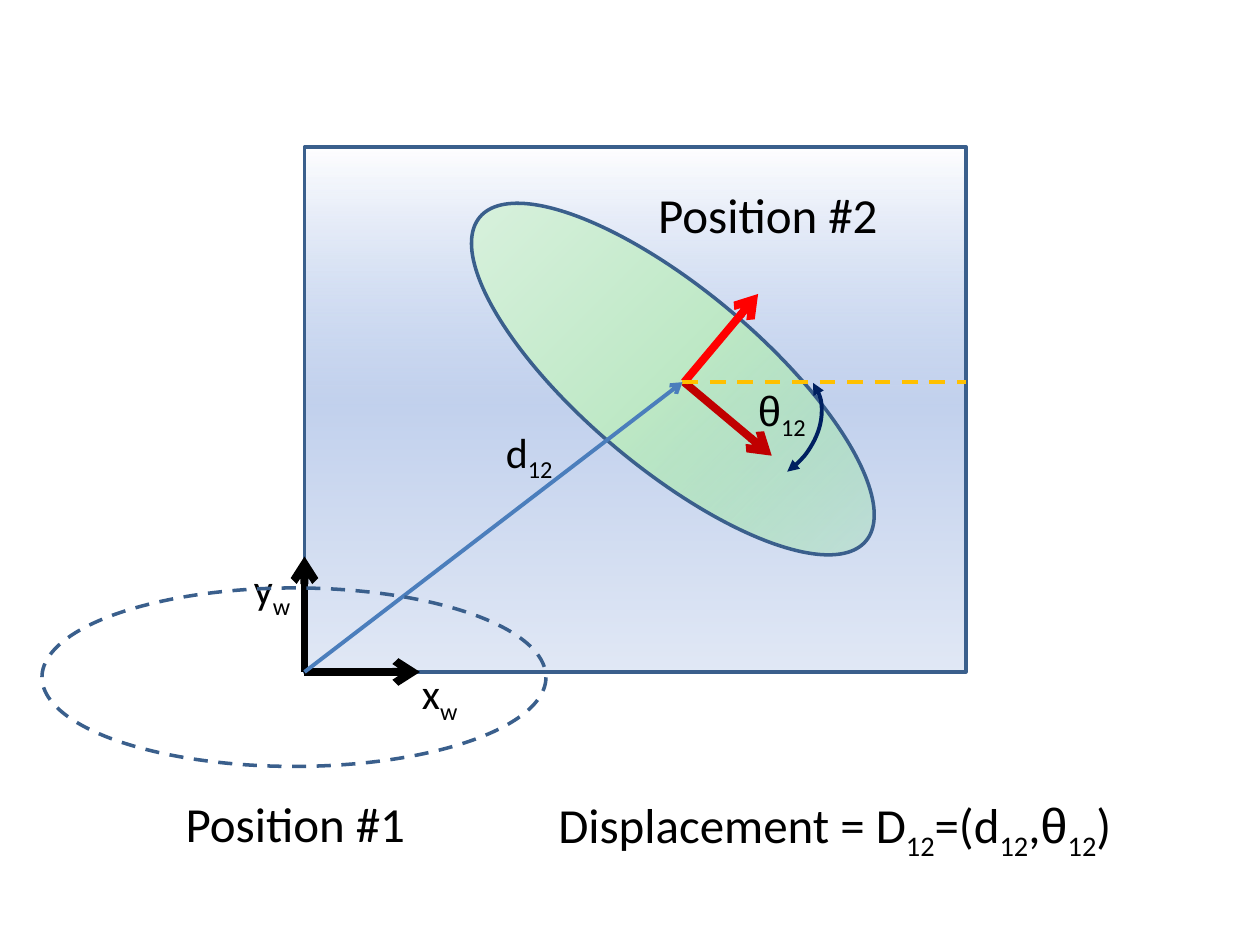
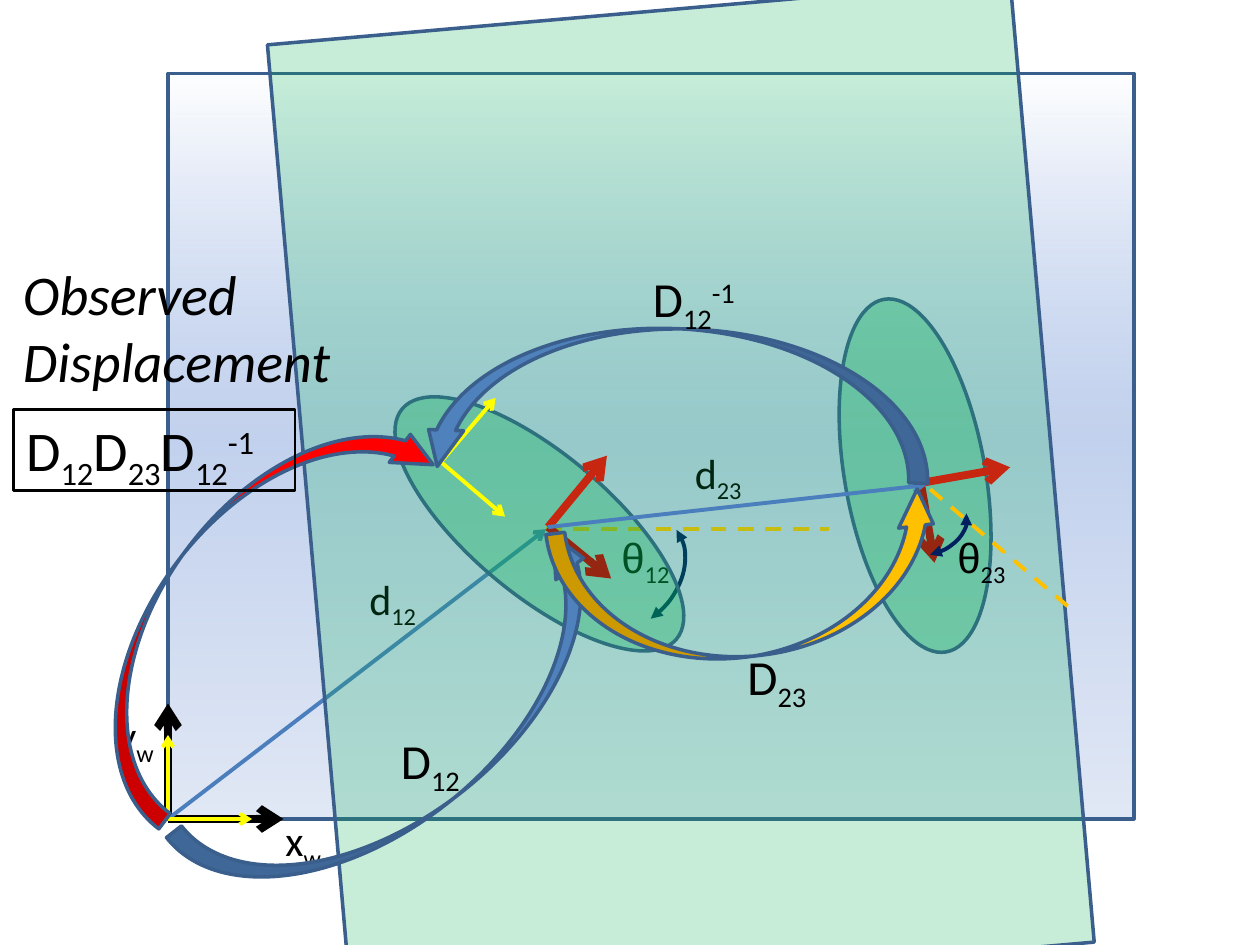
from dataclasses import dataclass

from pptx import Presentation
from pptx import util as u
from pptx.dml.color import RGBColor
from pptx.enum import dml, shapes, text
from pptx.oxml import ns, parse_xml
from pptx.oxml.xmlchemy import OxmlElement


@dataclass(frozen=True)
class Theme:
    font: str = "Calibri"
    greek: str = "Arial"
    black: str = "000000"
    outline: str = "3A5F8C"
    vector: str = "4B7EBC"
    curve: str = "4F81BD"
    red: str = "FF0000"
    dark_red: str = "C00000"
    gold: str = "FFC000"
    yellow: str = "FFFF00"
    navy: str = "002060"
    green: str = "00B050"
    sky: tuple = ((0, "9DB7E5", 0), (50, "C2D1ED", 100), (100, "E1E8F5", 100))
    mint: tuple = ((0, "91DEA0", 14), (50, "BDE8C5", 100), (100, "DFF3E3", 100))
    small: int = 24
    medium: int = 28
    large: int = 32
    thin: float = 2.25
    thick: float = 4.5
    edge: float = 2


T = Theme()
K = shapes.MSO_SHAPE
CELL = u.Pt(6)
COLS, ROWS = 120, 90


def label(s, words, x, y, w, h, size=T.small, italic=False, border=None):
    sp = s.shapes.add_textbox(*(round(v * CELL) for v in (x, y, w, h)))
    if border:
        sp.line.color.rgb = RGBColor.from_string(border)
        sp.line.width = u.Pt(1.5)
    tf = sp.text_frame
    tf.word_wrap = True
    tf.auto_size = text.MSO_AUTO_SIZE.SHAPE_TO_FIT_TEXT
    p = tf.paragraphs[0]
    for part in words.split("|"):
        r = p.add_run()
        r.text = part.lstrip("_^")
        r.font.name = T.greek if part == "θ" else T.font
        r.font.size = u.Pt(size)
        r.font.italic = italic
        r.font.color.rgb = RGBColor.from_string(T.black)
        shift = {"_": "-25000", "^": "30000"}.get(part[0])
        if shift:
            r.font._element.set("baseline", shift)


def draw(s, kind, a, b, c, d, color=T.outline, width=T.edge, fill=None, alpha=100,
         angle=0, rot=0, flip=False, adj=(), dash=False, head=None, tail=None):
    box = [round(v * CELL) for v in (a, b, c, d)]
    if kind == "line":
        sp = s.shapes.add_connector(shapes.MSO_CONNECTOR.STRAIGHT, *box)
        sp._element.spPr.append(OxmlElement("a:effectLst"))
    else:
        sp = s.shapes.add_shape(kind, *box)
        sp.shadow.inherit = False
        sp.rotation = rot
        for i, value in enumerate(adj):
            sp.adjustments[i] = value
        if flip:
            sp._element.spPr.xfrm.set("flipV", "1")
        sp.fill.background()
    if isinstance(fill, tuple):
        stops = "".join(f'<a:gs pos="{pos * 1000}"><a:srgbClr val="{rgb}">'
                        f'<a:alpha val="{op * 1000}"/></a:srgbClr></a:gs>' for pos, rgb, op in fill)
        pr = sp._element.spPr
        pr.replace(pr.find(ns.qn("a:noFill")), parse_xml(
            f'<a:gradFill {ns.nsdecls("a")} rotWithShape="0"><a:gsLst>{stops}</a:gsLst>'
            f'<a:lin ang="{angle * 60000}" scaled="0"/></a:gradFill>'))
    elif fill:
        sp.fill.solid()
        sp.fill.fore_color.rgb = RGBColor.from_string(fill)
        if alpha < 100:
            clear = OxmlElement("a:alpha")
            clear.set("val", str(alpha * 1000))
            sp._element.spPr.find(ns.qn("a:solidFill"))[0].append(clear)
    sp.line.color.rgb = RGBColor.from_string(color)
    sp.line.width = u.Pt(width)
    if dash:
        sp.line.dash_style = dml.MSO_LINE.DASH
    for tag, tip in (("a:headEnd", head), ("a:tailEnd", tail)):
        if tip:
            end = OxmlElement(tag)
            end.set("type", tip)
            sp.line._get_or_add_ln().append(end)


prs = Presentation()
prs.slide_width, prs.slide_height = COLS * CELL, ROWS * CELL
single, chain = (prs.slides.add_slide(prs.slide_layouts[6]) for _ in range(2))

draw(single, K.RECTANGLE, 29, 14, 63, 50, fill=T.sky, angle=90)
draw(single, K.OVAL, 40.08, 27.6, 48, 17, fill=T.mint, angle=225, rot=40)
for x, y, color in ((73.5, 43.4, T.dark_red), (72.2, 28, T.red)):
    draw(single, "line", 65.16, 36.4, x, y, color, T.thick, tail="arrow")
draw(chain, K.RECTANGLE, 16, 7, 92, 71, fill=T.sky, angle=90)

for s, x, y in ((single, 29, 64), (chain, 16, 78)):
    for dx, dy in ((11, 0), (0, -11)):
        draw(s, "line", x, y, x + dx, y + dy, T.black, T.thick, tail="arrow")
    label(s, "y|_w", x - 6, y - 11, 9, 6)
    label(s, "x|_w", x + 10, y - 1, 9, 6)
    draw(s, "line", x + 36, y - 27.6, x + 63, y - 27.6, T.gold, T.thin, dash=True)
    draw(s, "line", x, y, x + 36, y - 27.6, T.vector, T.thin, tail="arrow")
    label(s, "d|_12", x + 18, y - 24, 11, 6)
    draw(s, K.ARC, x + 37.4, y - 30.4, 10.8, 13.92, T.navy, T.thin, rot=54,
         head="triangle", tail="triangle")
    label(s, "θ|_12", x + 42, y - 28, 11, 6)

draw(single, K.OVAL, 4, 56, 48, 17, dash=True)
label(single, "Position #1", 16.5, 75, 30.5, 6.8, size=T.medium)
label(single, "Position #2", 61.5, 17, 30.5, 6.8, size=T.medium)
label(single, "Displacement = D|_12|=(d|_12|,|θ|_12|)", 52, 75.1, 60, 6.8, size=T.medium)

label(chain, "d|_23", 65, 42, 11, 6)
poses = (
    (34.32, 43.2, 40, (52.2, 50.2), (58.2, 55.1), (57.8, 43.4)),
    (70.1, 38.6, 80, (87.7, 46), (89, 53.6), (96.2, 44.5)),
)
for x, y, rot, center, forward, side in poses:
    draw(chain, K.OVAL, x, y, 34.1, 13.4, fill=T.green, alpha=32, rot=rot)
    for tip, color in ((forward, T.dark_red), (side, T.red)):
        draw(chain, "line", *center, *tip, color, T.thick, tail="arrow")
draw(chain, K.RECTANGLE, 18.84, 11.5, 92, 71, fill=T.green, alpha=22, rot=85)
for start, tips in (((16, 78), ((24, 78), (16, 70))),
                    ((42, 44), ((48.1, 49.2), (47.2, 37.9)))):
    for tip in tips:
        draw(chain, "line", *start, *tip, T.yellow, T.thin, tail="arrow")

draw(chain, "line", 52.2, 50.2, 88.2, 46.2, T.vector, T.thin, tail="arrow")
draw(chain, "line", 88.6, 46.6, 102, 58, T.gold, T.thin, dash=True)
label(chain, "θ|_23", 90, 50, 11, 6)
draw(chain, K.ARC, 84.84, 45.6, 6.12, 8.52, T.navy, T.thin, rot=77,
     head="triangle", tail="triangle")

moves = (
    (15, 63.4, 48.4, 322, True, T.curve, ("D|_12", 37, 69, 9)),
    (52.7, 48.6, 37.3, 353, True, T.gold, ("D|_23", 70, 61, 9)),
    (40.2, 31.3, 48.4, 182, True, T.curve, ("D|_12|^-1", 61, 25, 13.6)),
    (0.6, 49.8, 45.1, 307, False, T.red, None),
)
for x, y, w, rot, flip, color, name in moves:
    draw(chain, K.CURVED_DOWN_ARROW, x, y, w, 13.9, fill=color, rot=rot, flip=flip,
         adj=(0.13, 0.24, 0.25))
    if name:
        label(chain, *name, 6.8, size=T.medium)
label(chain, "D|_12|D|_23|D|_12|^-1", 1.3, 39, 26.8, 7.7, size=T.large, border=T.black)
label(chain, "Observed Displacement", 1, 24.1, 34.2, 14.2, size=T.large, italic=True)

prs.save("out.pptx")
